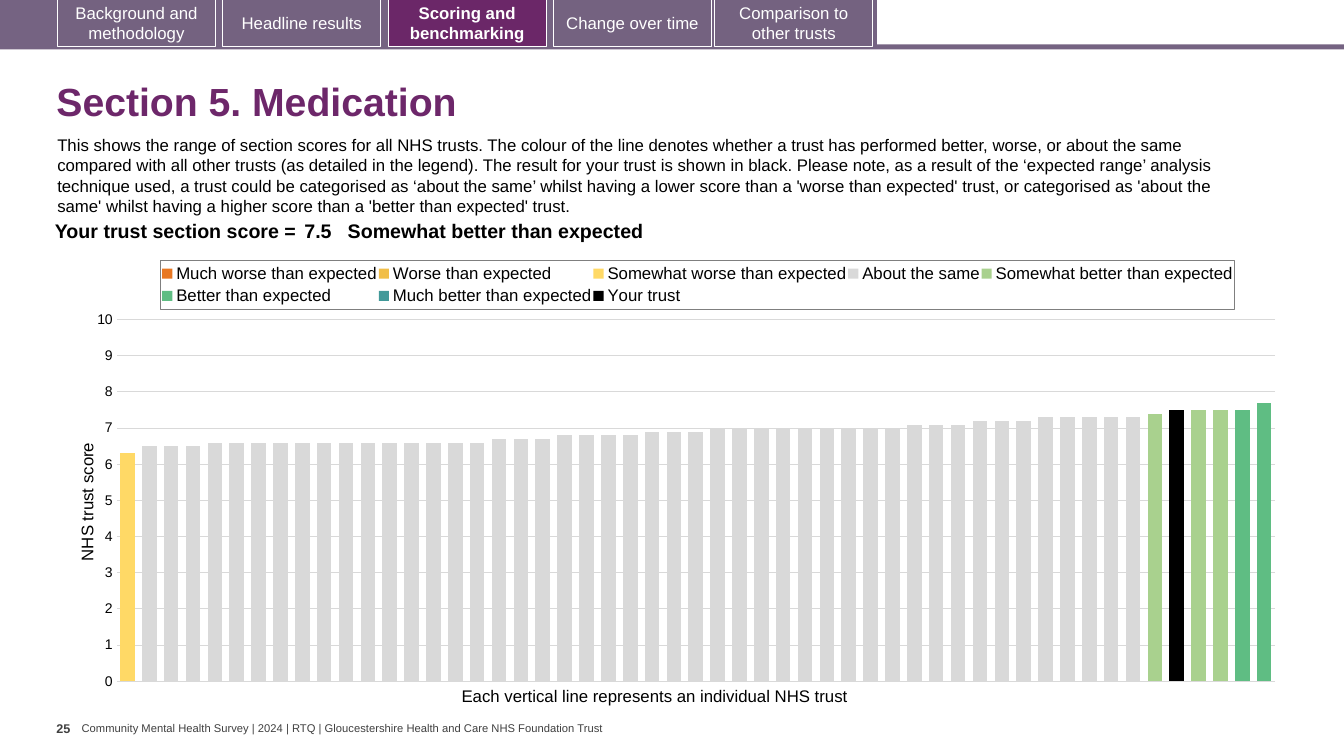
from copy import deepcopy
from dataclasses import dataclass

from pptx import Presentation
from pptx.chart.axis import ValueAxis
from pptx.chart.data import CategoryChartData
from pptx.dml.color import RGBColor
from pptx.enum.chart import XL_CHART_TYPE, XL_LEGEND_POSITION, XL_TICK_LABEL_POSITION, XL_TICK_MARK
from pptx.enum.shapes import MSO_SHAPE
from pptx.enum.text import MSO_ANCHOR, MSO_AUTO_SIZE, PP_ALIGN
from pptx.oxml import parse_xml
from pptx.oxml.ns import nsdecls, qn
from pptx.util import Inches, Pt

COLUMN = ROW = Inches(0.1)
COLUMNS, ROWS = 133.33, 75
CLUSTERED = XL_CHART_TYPE.COLUMN_CLUSTERED
LEGEND_TOP = XL_LEGEND_POSITION.TOP
NO_LABELS = XL_TICK_LABEL_POSITION.NONE
NO_TICKS, OUTER_TICKS = XL_TICK_MARK.NONE, XL_TICK_MARK.OUTSIDE
RECTANGLE = MSO_SHAPE.RECTANGLE
TOP, MIDDLE = MSO_ANCHOR.TOP, MSO_ANCHOR.MIDDLE
NO_FIT = MSO_AUTO_SIZE.NONE
LEFT, CENTER, RIGHT = PP_ALIGN.LEFT, PP_ALIGN.CENTER, PP_ALIGN.RIGHT
BLACK, WHITE, GREY = "000000", "FFFFFF", "404040"
MAUVE, TAB_MAUVE, PLUM, TITLE_PLUM = "756382", "746280", "6B2768", "6D276A"
TRUST_COUNT = 53


@dataclass
class Box:
    left: float
    top: float
    width: float
    height: float

    def lengths(self) -> tuple:
        return (int(self.left * COLUMN), int(self.top * ROW),
                int(self.width * COLUMN), int(self.height * ROW))


@dataclass
class Style:
    size: float
    color: str = BLACK
    bold: bool = False
    align: PP_ALIGN = LEFT


@dataclass
class Tab:
    label: str
    left: float
    active: bool = False


@dataclass
class Label:
    text: str
    box: Box
    style: Style
    margins: tuple = (1, 0.5)
    anchor: MSO_ANCHOR = TOP
    wrap: bool = False


@dataclass
class Band:
    name: str
    color: str
    first: int = 1
    scores: tuple = ()

    def values(self) -> list:
        row = [None] * TRUST_COUNT
        row[self.first - 1:self.first - 1 + len(self.scores)] = self.scores
        return row


TABS = [
    Tab("Background and methodology", 5.7),
    Tab("Headline results", 22.1),
    Tab("Scoring and benchmarking", 38.5, True),
    Tab("Change over time", 54.9),
    Tab("Comparison to other trusts", 70.9),
]
LABELS = [
    Label("Community Mental Health Survey | 2024 | RTQ | Gloucestershire Health and Care NHS Foundation Trust",
          Box(8.1, 71.6, 52.4, 1.3), Style(8, GREY), (0, 0), MIDDLE),
    Label("25", Box(5.6, 71, 2.5, 4), Style(9, GREY, True), (0, 0.5)),
    Label("This shows the range of section scores for all NHS trusts. The colour of the line denotes whether "
          "a trust has performed better, worse, or about the same compared with all other trusts (as detailed "
          "in the legend). The result for your trust is shown in black. Please note, as a result of the "
          "‘expected range’ analysis technique used, a trust could be categorised as ‘about the same’ whilst "
          "having a lower score than a 'worse than expected' trust, or categorised as 'about the same' whilst "
          "having a higher score than a 'better than expected' trust.",
          Box(4.7, 12.9, 121.3, 9.1), Style(12), wrap=True),
    Label("Each vertical line represents an individual NHS trust", Box(44.8, 67.5, 41.1, 3), Style(12)),
]
SCORE_CELLS = [
    ("Your trust section score =", 26.3, 0.4, RIGHT),
    ("7.5", 4.7, 0.4, LEFT),
    ("Somewhat better than expected", 85.9, 0, LEFT),
]
SAME_COUNTS = {6.5: 3, 6.6: 13, 6.7: 3, 6.8: 4, 6.9: 3, 7: 9, 7.1: 3, 7.2: 3, 7.3: 5}
SAME_SCORES = tuple(score for score, count in SAME_COUNTS.items() for _ in range(count))
BANDS = [
    Band("Much worse than expected", "E87722"),
    Band("Worse than expected", "F1BE48"),
    Band("Somewhat worse than expected", "FFD966", 1, (6.3,)),
    Band("About the same", "D9D9D9", 2, SAME_SCORES),
    Band("Somewhat better than expected", "A9D18E", 48, (7.4, 7.5, 7.5, 7.5)),
    Band("Better than expected", "5FBD83", 52, (7.5, 7.7)),
    Band("Much better than expected", "419999"),
    Band("Your trust", BLACK, 49, (7.5,)),
]


def rgb(color: str) -> RGBColor:
    return RGBColor.from_string(color)


def set_font(font, style: Style, name: str = "Arial") -> None:
    font.name, font.size, font.bold = name, Pt(style.size), style.bold
    font.color.rgb = rgb(style.color)


def write(frame, text: str, style: Style) -> None:
    frame.text = text
    paragraph = frame.paragraphs[0]
    paragraph.alignment = style.align
    set_font(paragraph.font, style)


def add_bar(slide, box: Box, color: str):
    shape = slide.shapes.add_shape(RECTANGLE, *box.lengths())
    shape.shadow.inherit = False
    shape.fill.solid()
    shape.fill.fore_color.rgb = rgb(color)
    shape.line.fill.background()
    return shape


def add_tab(slide, tab: Tab) -> None:
    shape = add_bar(slide, Box(tab.left, -0.1, 15.7, 4.7), PLUM if tab.active else TAB_MAUVE)
    shape.line.color.rgb = rgb(WHITE)
    shape.line.width = Pt(0.75)
    shape.text_frame.vertical_anchor = MIDDLE
    write(shape.text_frame, tab.label, Style(12, WHITE, tab.active, CENTER))


def add_label(slide, label: Label) -> None:
    frame = slide.shapes.add_textbox(*label.box.lengths()).text_frame
    side, edge = label.margins
    frame.margin_left = frame.margin_right = int(side * COLUMN)
    frame.margin_top = frame.margin_bottom = int(edge * ROW)
    frame.word_wrap, frame.vertical_anchor = label.wrap, label.anchor
    write(frame, label.text, label.style)


def add_title(slide, text: str) -> None:
    title = slide.shapes.title
    title.left, title.top, title.width, title.height = Box(4.6, 6.7, 124.9, 7.2).lengths()
    frame = title.text_frame
    frame.auto_size, frame.vertical_anchor = NO_FIT, MIDDLE
    write(frame, text, Style(28, TITLE_PLUM, True))
    frame.paragraphs[0].line_spacing = 0.9


def add_score_table(slide) -> None:
    table = slide.shapes.add_table(1, len(SCORE_CELLS), *Box(3.5, 21.5, 116.9, 3.1).lengths()).table
    table.first_row = table.horz_banding = False
    for index, (text, width, side, align) in enumerate(SCORE_CELLS):
        table.columns[index].width = int(width * COLUMN)
        cell = table.cell(0, index)
        cell.fill.background()
        cell.margin_left = cell.margin_right = int(side * COLUMN)
        cell.margin_top = cell.margin_bottom = int(0.4 * ROW)
        write(cell.text_frame, text, Style(14, BLACK, True, align))


def place(element, index: int, shares: dict, target: str = "") -> None:
    for layout in element.findall(qn("c:layout")):
        element.remove(layout)
    modes = '<c:xMode val="edge"/><c:yMode val="edge"/>'
    sizes = "".join(f'<c:{key} val="{share}"/>' for key, share in shares.items())
    element.insert(index, parse_xml(
        f'<c:layout {nsdecls("c")}><c:manualLayout>{target}{modes}{sizes}</c:manualLayout></c:layout>'))


def move_last_series_to_right_axis(chart) -> None:
    plot_area = chart.element.xpath("//c:plotArea")[0]
    left_bars, categories, values = (plot_area.find(qn(f"c:{tag}")) for tag in ("barChart", "catAx", "valAx"))
    right_bars, right_categories, right_values = map(deepcopy, (left_bars, categories, values))
    left_bars.remove(left_bars.findall(qn("c:ser"))[-1])
    for series in right_bars.findall(qn("c:ser"))[:-1]:
        right_bars.remove(series)
    for reference, number in zip(right_bars.findall(qn("c:axId")), ("501", "502")):
        reference.set("val", number)
    for axis, number, partner in ((right_categories, "501", "502"), (right_values, "502", "501")):
        axis.find(qn("c:axId")).set("val", number)
        axis.find(qn("c:crossAx")).set("val", partner)
    right_values.find(qn("c:axPos")).set("val", "r")
    right_values.find(qn("c:crosses")).set("val", "max")
    left_bars.addnext(right_bars)
    values.addnext(right_values)
    right_values.addnext(right_categories)
    right_axis = ValueAxis(right_values)
    right_axis.has_major_gridlines = False
    right_axis.major_tick_mark = OUTER_TICKS
    right_axis.tick_label_position = NO_LABELS


def add_score_chart(slide) -> None:
    data = CategoryChartData()
    data.categories = [str(number + 1) for number in range(TRUST_COUNT)]
    for band in BANDS:
        data.add_series(band.name, band.values())
    chart = slide.shapes.add_chart(CLUSTERED, *Box(6.7, 24.7, 121.5, 44.4).lengths(), data).chart
    chart.has_title = False
    set_font(chart.font, Style(10), "Calibri")
    plot = chart.plots[0]
    plot.gap_width, plot.overlap, plot.vary_by_categories = 50, 100, False
    for series, band in zip(plot.series, BANDS):
        series.format.fill.solid()
        series.format.fill.fore_color.rgb = rgb(band.color)

    chart.category_axis.visible = False
    axis = chart.value_axis
    axis.minimum_scale, axis.maximum_scale, axis.major_unit = 0, 10, 1
    axis.major_tick_mark = NO_TICKS
    axis.format.line.fill.background()
    move_last_series_to_right_axis(chart)
    gridline = axis.major_gridlines.format.line
    gridline.color.rgb, gridline.width = rgb("D9D9D9"), Pt(0.75)
    set_font(axis.tick_labels.font, Style(10))
    write(axis.axis_title.text_frame, "NHS trust score", Style(12))

    chart.has_legend = True
    chart.legend.position, chart.legend.include_in_layout = LEGEND_TOP, False
    set_font(chart.legend.font, Style(12))
    legend = chart.element.xpath("//c:legend")[0]
    legend.find(qn("c:overlay")).addnext(parse_xml(
        f'<c:spPr {nsdecls("c", "a")}><a:ln w="9525"><a:solidFill><a:srgbClr val="7F7F7F"/>'
        '</a:solidFill></a:ln></c:spPr>'))
    place(legend, 1, {"x": 0.076, "y": 0.025, "w": 0.877, "h": 0.11})
    place(chart.element.xpath("//c:valAx/c:title")[0], 1, {"x": 0.005, "y": 0.426})
    place(chart.element.xpath("//c:plotArea")[0], 0, {"x": 0.04, "y": 0.158, "w": 0.946, "h": 0.808},
          '<c:layoutTarget val="inner"/>')


def main() -> None:
    presentation = Presentation()
    presentation.slide_width, presentation.slide_height = int(COLUMNS * COLUMN), ROWS * ROW
    slide = presentation.slides.add_slide(presentation.slide_layouts[5])
    add_bar(slide, Box(0, 4.4, COLUMNS, 0.5), MAUVE)
    add_bar(slide, Box(0, 0, 87, 4.7), MAUVE)
    for tab in TABS:
        add_tab(slide, tab)
    add_title(slide, "Section 5. Medication")
    for label in LABELS:
        add_label(slide, label)
    add_score_chart(slide)
    add_score_table(slide)
    presentation.save("out.pptx")


if __name__ == "__main__":
    main()
